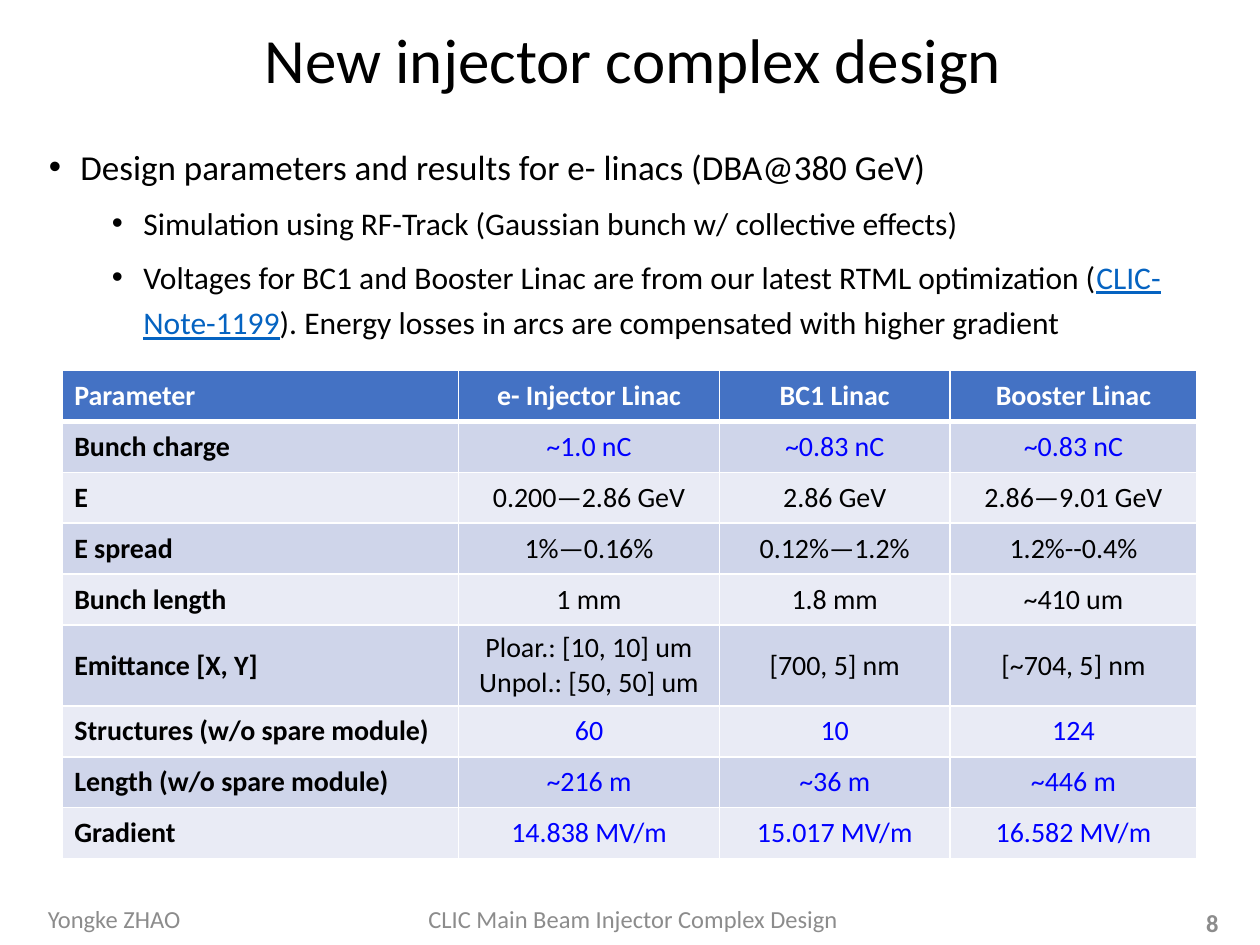
from lxml import etree
from pptx import Presentation
from pptx.dml.color import RGBColor
from pptx.enum.text import MSO_ANCHOR, MSO_AUTO_SIZE, PP_ALIGN
from pptx.oxml.ns import qn
from pptx.util import Pt

LEFT, CENTER, RIGHT = PP_ALIGN.LEFT, PP_ALIGN.CENTER, PP_ALIGN.RIGHT
MIDDLE, TOP = MSO_ANCHOR.MIDDLE, MSO_ANCHOR.TOP
TITLE_ONLY = 5
FONT = "Calibri"
COLORS = {
    "text": "000000", "white": "FFFFFF", "link": "0563C1", "footer": "8C8C8C",
    "header": "4472C4", "band_dark": "CFD5EA", "band_light": "E9EBF5",
    "highlight": "0000FF",
}

# Content
TITLE = "New injector complex design"
BULLETS = [  # level, runs of (text, colour)
    (0, [("Design parameters and results for e- linacs (DBA@380 GeV)", "text")]),
    (1, [("Simulation using RF-Track (Gaussian bunch w/ collective effects)", "text")]),
    (1, [("Voltages for BC1 and Booster Linac are from our latest RTML optimization (", "text"),
         ("CLIC-Note-1199", "link"),
         ("). Energy losses in arcs are compensated with higher gradient", "text")]),
]
LEVELS = [  # size, left margin, space before
    (20, 18, 10),
    (18, 54, 5),
]
HANGING = 18
ROWS = [
    ("Parameter", "e- Injector Linac", "BC1 Linac", "Booster Linac"),
    ("Bunch charge", "~1.0 nC", "~0.83 nC", "~0.83 nC"),
    ("E", "0.200—2.86 GeV", "2.86 GeV", "2.86—9.01 GeV"),
    ("E spread", "1%—0.16%", "0.12%—1.2%", "1.2%--0.4%"),
    ("Bunch length", "1 mm", "1.8 mm", "~410 um"),
    ("Emittance [X, Y]", "Ploar.: [10, 10] um\nUnpol.: [50, 50] um", "[700, 5] nm", "[~704, 5] nm"),
    ("Structures (w/o spare module)", "60", "10", "124"),
    ("Length (w/o spare module)", "~216 m", "~36 m", "~446 m"),
    ("Gradient", "14.838 MV/m", "15.017 MV/m", "16.582 MV/m"),
]
HIGHLIGHTED = {"Bunch charge", "Structures (w/o spare module)",
               "Length (w/o spare module)", "Gradient"}
COLUMN_WIDTHS = [226.8, 149, 131.8, 141.1]
ROW_HEIGHT, TALL_ROW_HEIGHT = 29.1, 46.3
TABLE_LEFT, TABLE_TOP = 35.3, 211.7
FOOTERS = [  # text, left, top, width, alignment, bold
    ("Yongke ZHAO", 20.2, 516.2, 162, LEFT, False),
    ("CLIC Main Beam Injector Complex Design", 212.4, 516.2, 298.8, CENTER, False),
    ("8", 541.4, 518.4, 162, RIGHT, True),
]
FOOTER_HEIGHT = 17.3


def rgb(name):
    return RGBColor.from_string(COLORS[name])


def add_run(paragraph, text, size, color, bold=False):
    run = paragraph.add_run()
    run.text = text
    font = run.font
    font.name, font.size, font.bold = FONT, Pt(size), bold
    font.color.rgb = rgb(color)
    return run


def place(shape, left, top, width, height):
    shape.left, shape.top = Pt(left), Pt(top)
    shape.width, shape.height = Pt(width), Pt(height)


def add_text_frame(slide, left, top, width, height, anchor):
    box = slide.shapes.add_textbox(Pt(left), Pt(top), Pt(width), Pt(height))
    frame = box.text_frame
    frame.word_wrap = True
    frame.vertical_anchor = anchor
    return frame


def set_bullet(paragraph, margin):
    properties = paragraph._p.get_or_add_pPr()
    properties.set("marL", str(Pt(margin)))
    properties.set("indent", str(-Pt(HANGING)))
    etree.SubElement(properties, qn("a:buFont")).set("typeface", "Arial")
    etree.SubElement(properties, qn("a:buChar")).set("char", "•")


def set_borders(cell, is_header, below_header):
    widths = {"a:lnL": 1, "a:lnR": 1, "a:lnT": 3 if below_header else 1,
              "a:lnB": 3 if is_header else 1}
    properties = cell._tc.get_or_add_tcPr()
    for index, (tag, width) in enumerate(widths.items()):
        line = etree.Element(qn(tag), w=str(Pt(width)))
        fill = etree.SubElement(line, qn("a:solidFill"))
        etree.SubElement(fill, qn("a:srgbClr")).set("val", COLORS["white"])
        properties.insert(index, line)  # borders precede the fill


def add_title(slide):
    title = slide.shapes.title
    place(title, 20.9, 9.4, 681.8, 53.3)
    frame = title.text_frame
    frame.auto_size = MSO_AUTO_SIZE.NONE
    frame.vertical_anchor = MIDDLE
    paragraph = frame.paragraphs[0]
    paragraph.alignment = CENTER
    paragraph.line_spacing = 0.9
    add_run(paragraph, TITLE, 36, "text")


def add_bullets(slide):
    frame = add_text_frame(slide, 20.9, 74.9, 681.8, 139, TOP)
    for index, (level, runs) in enumerate(BULLETS):
        paragraph = frame.add_paragraph() if index else frame.paragraphs[0]
        size, margin, space_before = LEVELS[level]
        paragraph.level = level
        paragraph.line_spacing = 1.2
        paragraph.space_before = Pt(space_before)
        set_bullet(paragraph, margin)
        for text, color in runs:
            run = add_run(paragraph, text, size, color)
            run.font.underline = color == "link"


def fill_cell(cell, text, row_index, column_index, highlighted):
    is_header, is_label = row_index == 0, column_index == 0
    if is_header:
        fill, color = "header", "white"
    else:
        fill = "band_dark" if row_index % 2 else "band_light"
        color = "highlight" if highlighted and not is_label else "text"
    cell.fill.solid()
    cell.fill.fore_color.rgb = rgb(fill)
    cell.vertical_anchor = MIDDLE
    set_borders(cell, is_header, row_index == 1)
    frame = cell.text_frame
    for index, line in enumerate(text.split("\n")):
        paragraph = frame.add_paragraph() if index else frame.paragraphs[0]
        paragraph.alignment = LEFT if is_label else CENTER
        add_run(paragraph, line, 16, color, is_header or is_label)


def add_parameter_table(slide):
    heights = [TALL_ROW_HEIGHT if any("\n" in text for text in row) else ROW_HEIGHT
               for row in ROWS]
    table = slide.shapes.add_table(
        len(ROWS), len(COLUMN_WIDTHS), Pt(TABLE_LEFT), Pt(TABLE_TOP),
        Pt(sum(COLUMN_WIDTHS)), Pt(sum(heights))).table
    for column, width in zip(table.columns, COLUMN_WIDTHS):
        column.width = Pt(width)
    for row_index, (row, height) in enumerate(zip(ROWS, heights)):
        table.rows[row_index].height = Pt(height)
        for column_index, text in enumerate(row):
            fill_cell(table.cell(row_index, column_index), text,
                      row_index, column_index, row[0] in HIGHLIGHTED)


def add_footers(slide):
    for text, left, top, width, alignment, bold in FOOTERS:
        frame = add_text_frame(slide, left, top, width, FOOTER_HEIGHT, MIDDLE)
        paragraph = frame.paragraphs[0]
        paragraph.alignment = alignment
        add_run(paragraph, text, 14, "footer", bold)


def main():
    presentation = Presentation()
    presentation.slide_width, presentation.slide_height = Pt(720), Pt(540)
    slide = presentation.slides.add_slide(presentation.slide_layouts[TITLE_ONLY])
    add_title(slide)
    add_bullets(slide)
    add_footers(slide)
    add_parameter_table(slide)
    presentation.save("out.pptx")


if __name__ == "__main__":
    main()
